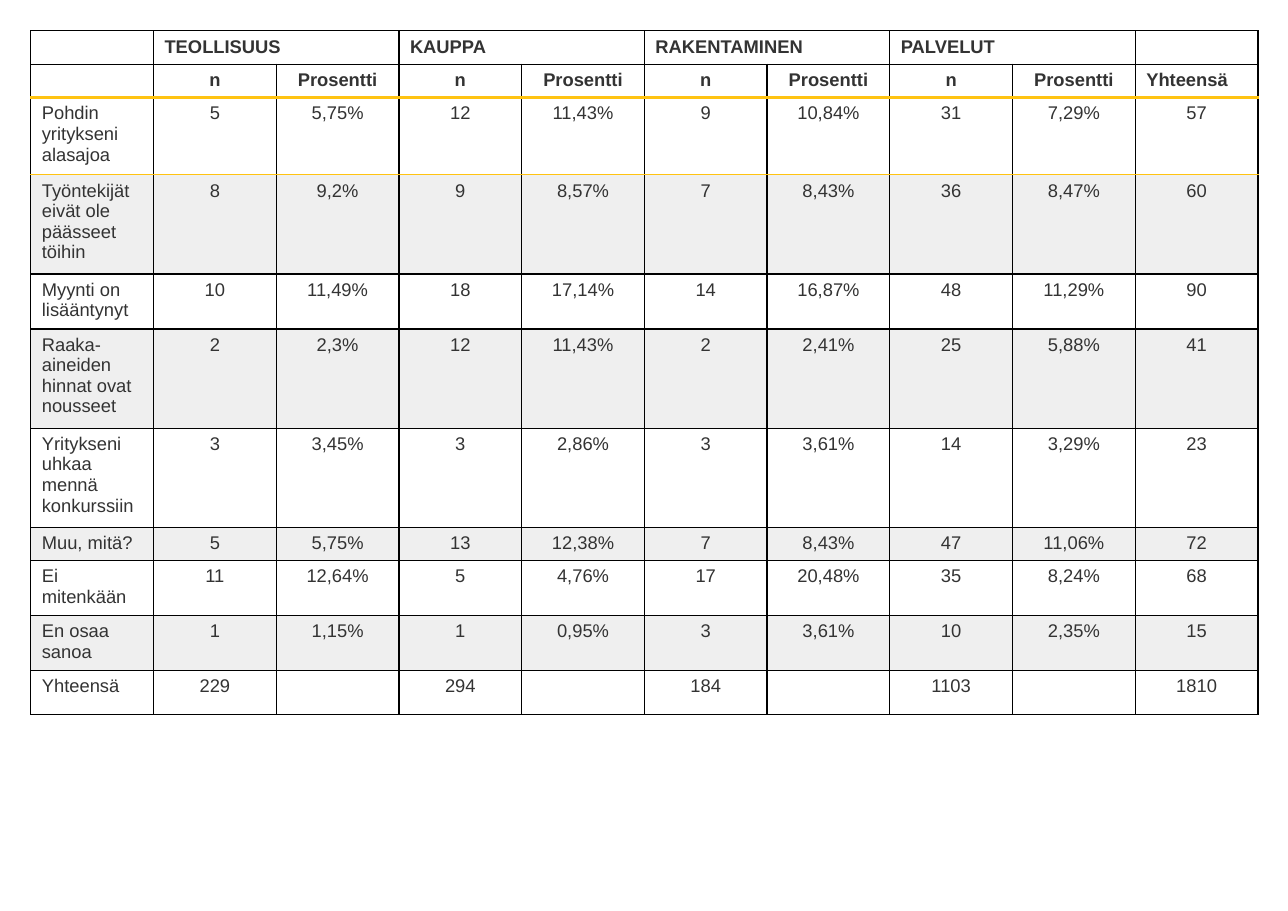
from lxml.etree import SubElement
from pptx import Presentation
from pptx.dml.color import RGBColor
from pptx.enum.text import PP_ALIGN
from pptx.oxml.ns import qn
from pptx.util import Inches, Pt

THEME = {
    "font": "Arial",
    "size": 12,
    "text": "333333",
    "band": "EFEFEF",
    "grid": ("000000", 1),
    "header_rule": ("FFC311", 2),
    "first_row_rule": ("FFC311", 1),
}
SECTORS = ["TEOLLISUUS", "KAUPPA", "RAKENTAMINEN", "PALVELUT"]
# Each answer: row height in inches, label, then n and percent by sector, and the total
ANSWERS = [
    (0.7, "Pohdin yritykseni alasajoa", "5 5,75% 12 11,43% 9 10,84% 31 7,29% 57"),
    (0.9, "Työntekijät eivät ole päässeet töihin", "8 9,2% 9 8,57% 7 8,43% 36 8,47% 60"),
    (0.5, "Myynti on lisääntynyt", "10 11,49% 18 17,14% 14 16,87% 48 11,29% 90"),
    (0.9, "Raaka-aineiden hinnat ovat nousseet", "2 2,3% 12 11,43% 2 2,41% 25 5,88% 41"),
    (0.9, "Yritykseni uhkaa mennä konkurssiin", "3 3,45% 3 2,86% 3 3,61% 14 3,29% 23"),
    (0.3, "Muu, mitä?", "5 5,75% 13 12,38% 7 8,43% 47 11,06% 72"),
    (0.5, "Ei mitenkään", "11 12,64% 5 4,76% 17 20,48% 35 8,24% 68"),
    (0.5, "En osaa sanoa", "1 1,15% 1 0,95% 3 3,61% 10 2,35% 15"),
]
TOTALS = ["Yhteensä", "229", "", "294", "", "184", "", "1103", "", "1810"]
HEADER_ROWS = 2

rows = [[""], ["", *["n", "Prosentti"] * len(SECTORS), "Yhteensä"]]
for sector in SECTORS:
    rows[0] += [sector, ""]
rows[0].append("")
rows += [[label, *values.split()] for _, label, values in ANSWERS]
rows.append(TOTALS)
heights = [0.3] * HEADER_ROWS + [height for height, _, _ in ANSWERS] + [0.4]
row_edges = [THEME["grid"]] * (len(rows) + 1)
row_edges[HEADER_ROWS] = THEME["header_rule"]
row_edges[HEADER_ROWS + 1] = THEME["first_row_rule"]


def draw_borders(cell, top, bottom):
    """Rule all four sides; the left and right sides take the grid line."""
    sides = {"lnL": THEME["grid"], "lnR": THEME["grid"], "lnT": top, "lnB": bottom}
    for side, (color, width) in sides.items():
        line = SubElement(cell._tc.get_or_add_tcPr(), qn(f"a:{side}"), w=str(Pt(width)))
        fill = SubElement(line, qn("a:solidFill"))
        SubElement(fill, qn("a:srgbClr"), val=color)


def write_cell(cell, text, bold, alignment):
    para = cell.text_frame.paragraphs[0]
    para.alignment = alignment
    if not text:
        SubElement(para._p, qn("a:endParaRPr"), sz=str(THEME["size"] * 100))
        return
    span = para.add_run()
    span.text = text
    formats = {"name": THEME["font"], "size": Pt(THEME["size"]), "bold": bold}
    for name, value in formats.items():
        setattr(span.font, name, value)
    span.font.color.rgb = RGBColor.from_string(THEME["text"])


deck = Presentation()
deck.slide_width, deck.slide_height = Inches(11.69), Inches(8.27)
page = deck.slides.add_slide(deck.slide_layouts[6])

table = page.shapes.add_table(
    len(rows), len(TOTALS), Inches(0.28), Inches(0.28), Inches(11.14), Inches(sum(heights))
).table
table.first_row = table.horz_banding = False

for row_index, texts in enumerate(rows):
    table.rows[row_index].height = Inches(heights[row_index])
    is_header = row_index < HEADER_ROWS
    is_banded = not is_header and row_index % 2 == 1
    for column, text in enumerate(texts):
        cell = table.cell(row_index, column)
        is_left = column == 0 or row_index == 0 or (is_header and column == len(texts) - 1)
        write_cell(cell, text, is_header, PP_ALIGN.LEFT if is_left else PP_ALIGN.CENTER)
        draw_borders(cell, row_edges[row_index], row_edges[row_index + 1])
        if is_banded:
            cell.fill.solid()
            cell.fill.fore_color.rgb = RGBColor.from_string(THEME["band"])
        else:
            cell.fill.background()

for index in range(len(SECTORS)):
    first = 1 + 2 * index
    table.cell(0, first).merge(table.cell(0, first + 1))

deck.save("out.pptx")
